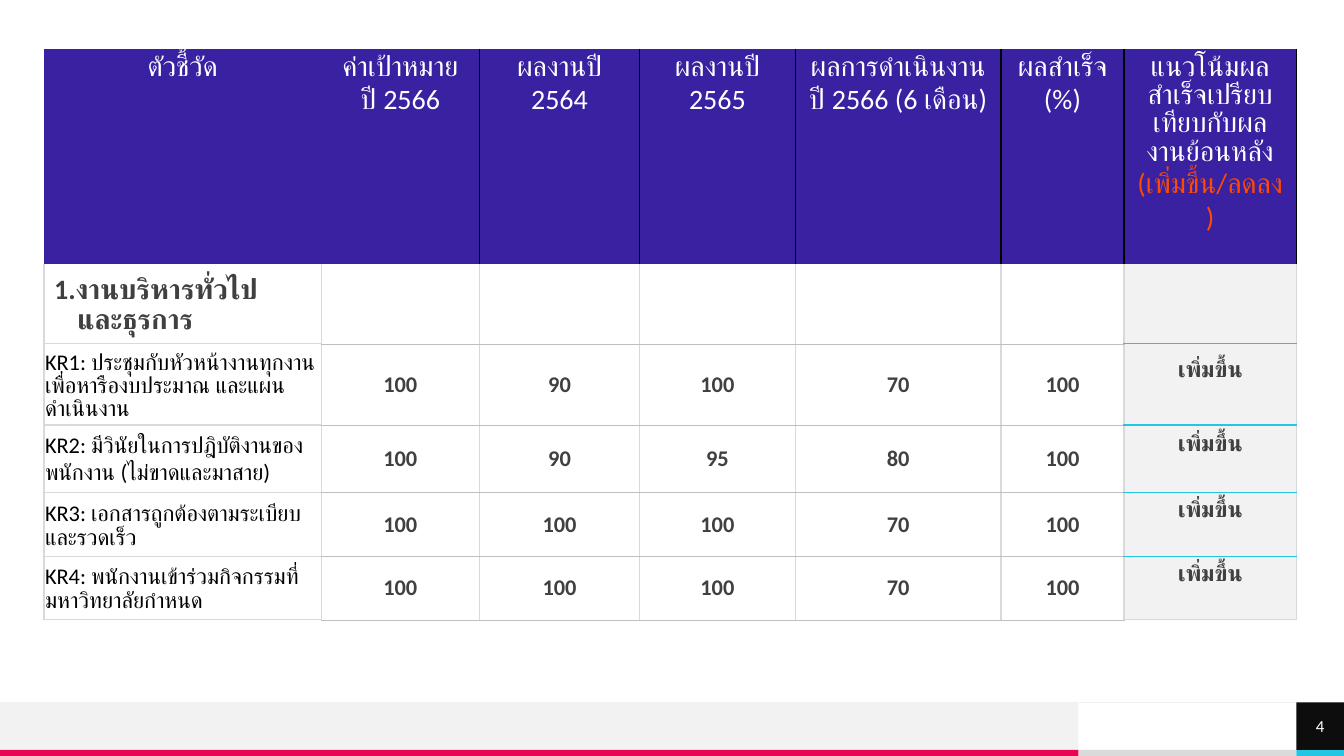
from dataclasses import dataclass, field
from typing import Optional

from lxml import etree
from pptx import Presentation
from pptx.dml.color import RGBColor as Rgb
from pptx.enum.shapes import MSO_CONNECTOR as Connector, MSO_SHAPE as Preset
from pptx.enum.text import MSO_ANCHOR as Anchor, PP_ALIGN as Align
from pptx.oxml.ns import qn
from pptx.util import Pt

COLORS = {
    "white": "FFFFFF", "black": "000000", "text": "404040", "header": "3921A1",
    "orange": "FF4A01", "panel": "F2F2F2", "silver": "DADADA", "pink": "E80554",
    "cyan": "25C6E3", "grid": "D9D9D9", "rule": "BFBFBF", "dark": "0D0D0D",
}
NO_GRID_STYLE = "{2D5ABB26-0587-4C30-8999-92F81FD0307C}"
SLIDE_WIDTH, SLIDE_HEIGHT = 960, 540
FOOTER_TOP, STRIP_TOP = 501.8, 535.7
PANEL_RIGHT, NUMBER_LEFT = 770.4, 925.9
TABLE_LEFT, TABLE_TOP = 31.5, 35.2
COLUMN_WIDTHS = [198, 113, 114.4, 111.2, 147, 87.9, 123]
ROW_HEIGHTS = [153.6, 56.7, 58.1, 48.2, 45.6, 45.4]
HEADERS = [
    ["ตัวชี้วัด"], ["ค่าเป้าหมาย", "ปี 2566"], ["ผลงานปี 2564"], ["ผลงานปี 2565"],
    ["ผลการดำเนินงาน", "ปี 2566 (6 เดือน)"], ["ผลสำเร็จ (%)"],
    ["แนวโน้มผลสำเร็จเปรียบเทียบกับผลงานย้อนหลัง "],
]
TREND = "เพิ่มขึ้น"


@dataclass
class KeyResult:
    label: str
    values: list[int]


KEY_RESULTS = [
    KeyResult("KR1: ประชุมกับหัวหน้างานทุกงาน เพื่อหารืองบประมาณ และแผนดำเนินงาน", [100, 90, 100, 70, 100]),
    KeyResult("KR2: มีวินัยในการปฎิบัติงานของพนักงาน (ไม่ขาดและมาสาย)", [100, 90, 95, 80, 100]),
    KeyResult("KR3: เอกสารถูกต้องตามระเบียบ และรวดเร็ว", [100, 100, 100, 70, 100]),
    KeyResult("KR4: พนักงานเข้าร่วมกิจกรรมที่มหาวิทยาลัยกำหนด", [100, 100, 100, 70, 100]),
]


@dataclass
class Block:
    left: float
    top: float
    width: float
    height: float
    color: str


@dataclass
class CellStyle:
    fill: Optional[str] = None
    anchor: Anchor = Anchor.MIDDLE
    margins: tuple = (7.2, 3.6, 7.2, 3.6)  # left, top, right, bottom
    borders: dict = field(default_factory=dict)  # side: (color, width)


FOOTER_BLOCKS = [
    Block(PANEL_RIGHT, STRIP_TOP, NUMBER_LEFT - PANEL_RIGHT, SLIDE_HEIGHT - STRIP_TOP, "silver"),
    Block(0, FOOTER_TOP, PANEL_RIGHT, STRIP_TOP - FOOTER_TOP, "panel"),
    Block(0, STRIP_TOP, PANEL_RIGHT, SLIDE_HEIGHT - STRIP_TOP, "pink"),
    Block(NUMBER_LEFT, STRIP_TOP, SLIDE_WIDTH - NUMBER_LEFT, SLIDE_HEIGHT - STRIP_TOP, "cyan"),
]
NUMBER_BLOCK = Block(NUMBER_LEFT, FOOTER_TOP, SLIDE_WIDTH - NUMBER_LEFT, STRIP_TOP - FOOTER_TOP, "dark")


def rgb(name: str) -> Rgb:
    return Rgb.from_string(COLORS[name])


def add_text(paragraph, text: str, *, size: float, color: str, bold: bool = False,
             font: str = "Calibri", align: Optional[Align] = None) -> None:
    if align is not None:
        paragraph.alignment = align
    run = paragraph.add_run()
    run.text = text
    run.font.size, run.font.bold, run.font.name = Pt(size), bold, font
    run.font.color.rgb = rgb(color)


def add_block(slide, block: Block):
    shape = slide.shapes.add_shape(Preset.RECTANGLE, Pt(block.left), Pt(block.top),
                                   Pt(block.width), Pt(block.height))
    shape.shadow.inherit = False
    shape.fill.solid()
    shape.fill.fore_color.rgb = rgb(block.color)
    shape.line.fill.background()
    return shape


def set_margins(target, margins: tuple) -> None:
    (target.margin_left, target.margin_top,
     target.margin_right, target.margin_bottom) = map(Pt, margins)


def style_cell(cell, style: CellStyle) -> None:
    cell.vertical_anchor = style.anchor
    set_margins(cell, style.margins)
    if style.fill:
        cell.fill.solid()
        cell.fill.fore_color.rgb = rgb(style.fill)
    else:
        cell.fill.background()
    sides = [side for side in "LRTB" if side in style.borders]
    for index, side in enumerate(sides):
        color, width = style.borders[side]
        line = etree.Element(qn(f"a:ln{side}"), w=str(Pt(width)))
        solid = etree.SubElement(line, qn("a:solidFill"))
        etree.SubElement(solid, qn("a:srgbClr"), val=COLORS[color])
        cell._tc.get_or_add_tcPr().insert(index, line)


def fill_header(table) -> None:
    for column, lines in enumerate(HEADERS):
        cell = table.cell(0, column)
        sides = "" if column == 0 else "R" if column == 1 else "LR"
        style_cell(cell, CellStyle("header", Anchor.TOP, borders={side: ("black", 1) for side in sides}))
        frame = cell.text_frame
        for index, line in enumerate(lines):
            paragraph = frame.add_paragraph() if index else frame.paragraphs[0]
            add_text(paragraph, line, size=20, color="white", align=Align.CENTER)
    add_text(paragraph, "(เพิ่มขึ้น/ลดลง)", size=20, color="orange")


def fill_section(table) -> None:
    sides = {"L": ("grid", 1), "R": ("grid", 1)}
    last = len(COLUMN_WIDTHS) - 1
    fills, bottoms = {0: "white", last: "panel"}, {0: ("grid", 1), last: ("cyan", 1)}
    for column in range(last + 1):
        bottom = bottoms.get(column, ("rule", 0.25))
        style_cell(table.cell(1, column), CellStyle(fills.get(column), borders={**sides, "B": bottom}))
    frame = table.cell(1, 0).text_frame
    add_text(frame.paragraphs[0], "1.งานบริหารทั่วไป", size=20, color="text", bold=True)
    second = frame.add_paragraph()
    second._p.get_or_add_pPr().set("marL", str(Pt(16.5)))
    add_text(second, "และธุรการ", size=20, color="text", bold=True)


def fill_key_result(table, row: int, result: KeyResult) -> None:
    grid, rule, cyan = ("grid", 1), ("rule", 0.25), ("cyan", 1)
    sides = {"L": grid, "R": grid}
    label = table.cell(row, 0)
    style_cell(label, CellStyle("white", margins=(0.7, 0.7, 0.7, 0), borders={**sides, "T": grid, "B": grid}))
    add_text(label.text_frame.paragraphs[0], result.label, size=16, color="black")
    for column, value in enumerate(result.values, 1):
        cell = table.cell(row, column)
        style_cell(cell, CellStyle(borders={**sides, "T": rule, "B": rule}))
        add_text(cell.text_frame.paragraphs[0], str(value), size=16, color="text",
                 bold=True, align=Align.CENTER)
    trend = table.cell(row, len(COLUMN_WIDTHS) - 1)
    bottom = grid if result is KEY_RESULTS[-1] else cyan
    style_cell(trend, CellStyle("panel", margins=(7.2, 3.6, 7.2, 23),
                                borders={**sides, "T": cyan, "B": bottom}))
    add_text(trend.text_frame.paragraphs[0], TREND, size=16, color="text", bold=True,
             font="Cabin", align=Align.CENTER)


def add_results_table(slide) -> None:
    table = slide.shapes.add_table(len(ROW_HEIGHTS), len(COLUMN_WIDTHS), Pt(TABLE_LEFT), Pt(TABLE_TOP),
                                   Pt(sum(COLUMN_WIDTHS)), Pt(sum(ROW_HEIGHTS))).table
    table.first_row = table.horz_banding = False
    table._tbl.tblPr.find(qn("a:tableStyleId")).text = NO_GRID_STYLE
    for column, width in zip(table.columns, COLUMN_WIDTHS):
        column.width = Pt(width)
    for row, height in zip(table.rows, ROW_HEIGHTS):
        row.height = Pt(height)
    fill_header(table)
    fill_section(table)
    for row, result in enumerate(KEY_RESULTS, 2):
        fill_key_result(table, row, result)


def add_footer(slide) -> None:
    for block in FOOTER_BLOCKS:
        add_block(slide, block)
    line = slide.shapes.add_connector(Connector.STRAIGHT, Pt(SLIDE_WIDTH), Pt(FOOTER_TOP), Pt(0), Pt(FOOTER_TOP))
    line.line.color.rgb, line.line.width = rgb("panel"), Pt(0.5)
    etree.SubElement(line._element.spPr, qn("a:effectLst"))


def add_slide_number(slide) -> None:
    frame = add_block(slide, NUMBER_BLOCK).text_frame
    frame.vertical_anchor = Anchor.MIDDLE
    set_margins(frame, (0, 0, 0, 0))
    add_text(frame.paragraphs[0], "4", size=12, color="white", align=Align.CENTER)


def main() -> None:
    presentation = Presentation()
    presentation.slide_width, presentation.slide_height = Pt(SLIDE_WIDTH), Pt(SLIDE_HEIGHT)
    slide = presentation.slides.add_slide(presentation.slide_layouts[6])
    # Footer bands, then the results table, then the slide number
    add_footer(slide)
    add_results_table(slide)
    add_slide_number(slide)
    presentation.save("out.pptx")


if __name__ == "__main__":
    main()
